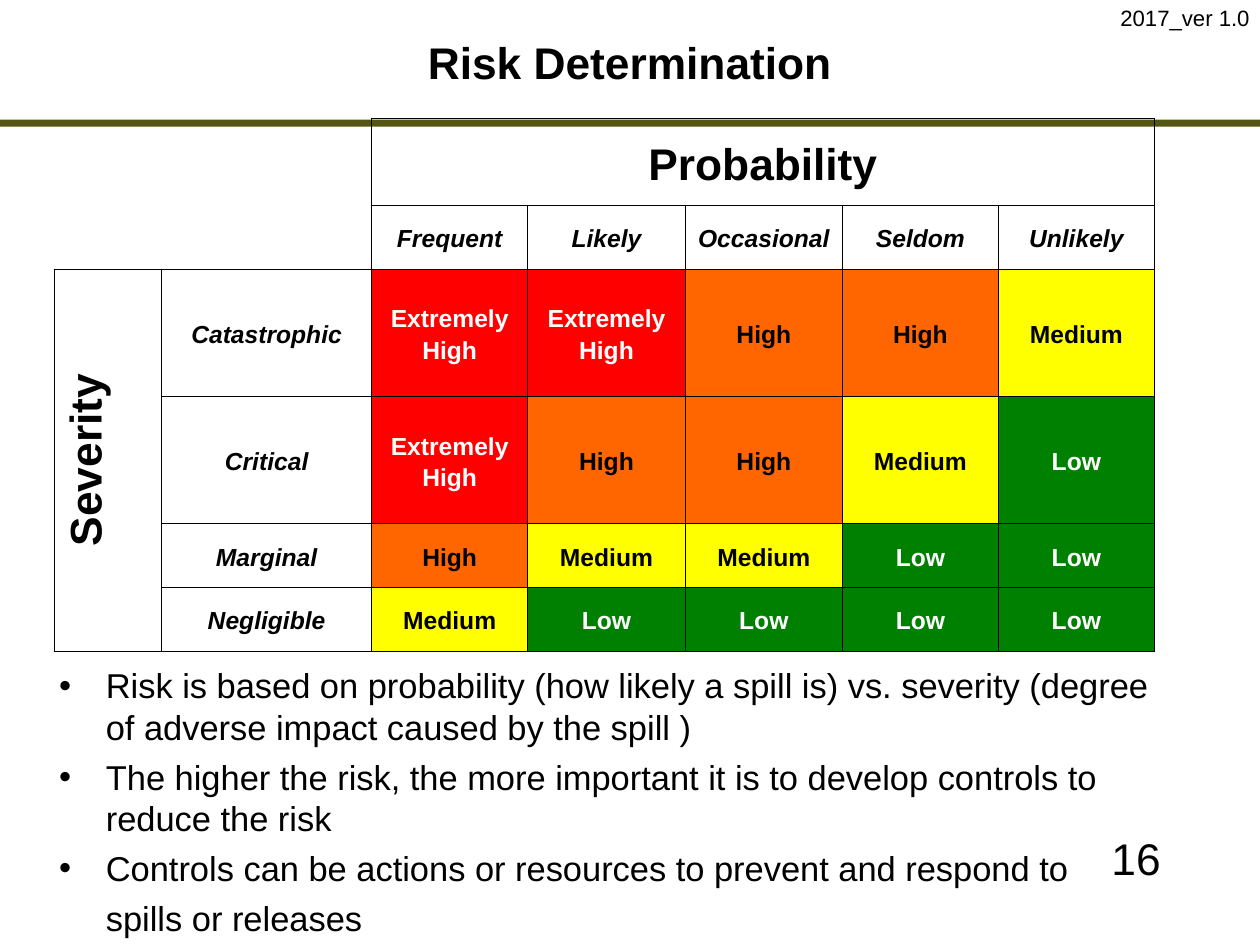
from pptx import Presentation
from pptx.dml.color import RGBColor
from pptx.enum.text import MSO_ANCHOR, MSO_AUTO_SIZE, PP_ALIGN
from pptx.enum.shapes import MSO_SHAPE
from pptx.oxml import parse_xml
from pptx.oxml.ns import nsdecls
from pptx.util import Pt

BLACK = RGBColor(0x00, 0x00, 0x00)
WHITE = RGBColor(0xFF, 0xFF, 0xFF)
OLIVE = RGBColor(0x54, 0x56, 0x12)
RED = RGBColor(0xFF, 0x00, 0x00)
ORANGE = RGBColor(0xFF, 0x66, 0x00)
YELLOW = RGBColor(0xFF, 0xFF, 0x00)
GREEN = RGBColor(0x00, 0x80, 0x00)

FONT = "Arial"
NO_GRID_STYLE = "{2D5ABB26-0587-4C30-8999-92F81FD0307C}"

# Risk level: (fill, text colour)
RISK_COLOURS = {
    "Extremely High": (RED, WHITE),
    "High": (ORANGE, BLACK),
    "Medium": (YELLOW, BLACK),
    "Low": (GREEN, WHITE),
}
PROBABILITIES = ["Frequent", "Likely", "Occasional", "Seldom", "Unlikely"]
RISKS_BY_SEVERITY = {
    "Catastrophic": ["Extremely High", "Extremely High", "High", "High", "Medium"],
    "Critical": ["Extremely High", "High", "High", "Medium", "Low"],
    "Marginal": ["High", "Medium", "Medium", "Low", "Low"],
    "Negligible": ["Medium", "Low", "Low", "Low", "Low"],
}
COLUMN_WIDTHS = [87.5, 170.5, 127, 128, 127.75, 126.75, 126.75]
ROW_HEIGHTS = [71, 51.75, 103.5, 103.5, 51.75, 51.75]
HEADER_ROWS = HEADER_COLUMNS = 2

BULLETS = [
    "Risk is based on probability (how likely a spill is) vs. severity "
    "(degree of adverse impact caused by the spill )",
    "The higher the risk, the more important it is to develop controls to reduce the risk",
    "Controls can be actions or resources to prevent and respond to",
]
CONTINUATION = "spills or releases"


def style_runs(paragraph, size, colour=BLACK, bold=False, italic=False):
    for run in paragraph.runs:
        font = run.font
        font.name, font.size = FONT, Pt(size)
        font.bold, font.italic = bold, italic
        font.color.rgb = colour


def place(shape, left, top, width, height):
    shape.left, shape.top = Pt(left), Pt(top)
    shape.width, shape.height = Pt(width), Pt(height)


def set_placeholder_frame(frame, anchor):
    frame.word_wrap = True
    frame.auto_size = MSO_AUTO_SIZE.NONE
    frame.vertical_anchor = anchor
    frame.margin_left = frame.margin_right = Pt(10)
    frame.margin_top = frame.margin_bottom = Pt(5.75)


def add_label(slide, text, size, left, top, width, height):
    label = slide.shapes.add_textbox(Pt(left), Pt(top), Pt(width), Pt(height))
    frame = label.text_frame
    frame.word_wrap = False
    frame.text = text
    frame.paragraphs[0].alignment = PP_ALIGN.CENTER
    style_runs(frame.paragraphs[0], size)


def add_rule(slide):
    rule = slide.shapes.add_shape(MSO_SHAPE.RECTANGLE, 0, Pt(97.25), Pt(1024), Pt(5.75))
    rule.shadow.inherit = False
    rule.fill.solid()
    rule.fill.fore_color.rgb = OLIVE
    rule.line.fill.background()


def fill_title(title):
    place(title, 51, -13.75, 921.5, 128)
    frame = title.text_frame
    set_placeholder_frame(frame, MSO_ANCHOR.MIDDLE)
    frame.text = "Risk Determination"
    frame.paragraphs[0].alignment = PP_ALIGN.CENTER
    style_runs(frame.paragraphs[0], 36, bold=True)


def fill_bullets(body):
    place(body, 38, 534.25, 921.5, 507)
    frame = body.text_frame
    set_placeholder_frame(frame, MSO_ANCHOR.TOP)
    frame.text = "\n".join([*BULLETS, CONTINUATION])
    for index, paragraph in enumerate(frame.paragraphs):
        properties = paragraph._p.get_or_add_pPr()
        properties.set("marL", str(Pt(38)))
        is_bullet = index < len(BULLETS)
        properties.set("indent", str(Pt(-38) if is_bullet else 0))
        marker = 'buChar %s char="•"' if is_bullet else "buNone %s"
        properties.append(parse_xml(f"<a:{marker % nsdecls('a')}/>"))
        paragraph.space_before = Pt(7 if index else 0)
        paragraph.line_spacing = 1.0
        style_runs(paragraph, 28)


def add_borders(cell, sides):
    """Draw black 1 pt edges on the given sides, listed in the order L, R, T, B."""
    for side in sides:
        cell._tc.get_or_add_tcPr().append(parse_xml(
            f'<a:ln{side} {nsdecls("a")} w="{Pt(1)}"><a:solidFill>'
            f'<a:srgbClr val="{BLACK}"/></a:solidFill></a:ln{side}>'))


def border_sides(row, column):
    """The empty corner only shares edges with its neighbours."""
    if row >= HEADER_ROWS or column >= HEADER_COLUMNS:
        return "LRTB"
    right = "R" if column == 1 else ""
    bottom = "B" if row == 1 or column == 0 else ""
    return right + bottom


def write_cell(cell, text, size=20, colour=BLACK, italic=False):
    cell.text = text
    cell.vertical_anchor = MSO_ANCHOR.MIDDLE
    cell.margin_left = cell.margin_right = Pt(5)
    cell.margin_top = cell.margin_bottom = 0
    paragraph = cell.text_frame.paragraphs[0]
    paragraph.alignment = PP_ALIGN.CENTER
    paragraph.line_spacing = 1.15
    style_runs(paragraph, size, colour, bold=True, italic=italic)


def add_risk_matrix(slide):
    frame = slide.shapes.add_table(
        len(ROW_HEIGHTS), len(COLUMN_WIDTHS), Pt(44), Pt(96),
        Pt(sum(COLUMN_WIDTHS)), Pt(sum(ROW_HEIGHTS)))
    matrix = frame.table
    matrix.first_row = matrix.horz_banding = False
    matrix._tbl.tblPr.find("{*}tableStyleId").text = NO_GRID_STYLE
    for column, width in zip(matrix.columns, COLUMN_WIDTHS):
        column.width = Pt(width)
    for row, height in zip(matrix.rows, ROW_HEIGHTS):
        row.height = Pt(height)
    for row in range(len(ROW_HEIGHTS)):
        for column in range(len(COLUMN_WIDTHS)):
            cell = matrix.cell(row, column)
            add_borders(cell, border_sides(row, column))
            cell.fill.background()

    matrix.cell(0, 0).merge(matrix.cell(1, 0))
    probability = matrix.cell(0, HEADER_COLUMNS)
    probability.merge(matrix.cell(0, len(COLUMN_WIDTHS) - 1))
    write_cell(probability, "Probability", 36)
    severity = matrix.cell(HEADER_ROWS, 0)
    severity.merge(matrix.cell(len(ROW_HEIGHTS) - 1, 0))
    write_cell(severity, "Severity", 36)
    severity._tc.get_or_add_tcPr().set("vert", "vert270")

    for column, name in enumerate(PROBABILITIES, HEADER_COLUMNS):
        write_cell(matrix.cell(1, column), name, italic=True)
    for row, (name, risks) in enumerate(RISKS_BY_SEVERITY.items(), HEADER_ROWS):
        write_cell(matrix.cell(row, 1), name, italic=True)
        for column, risk in enumerate(risks, HEADER_COLUMNS):
            fill, colour = RISK_COLOURS[risk]
            cell = matrix.cell(row, column)
            write_cell(cell, risk, colour=colour)
            cell.fill.solid()
            cell.fill.fore_color.rgb = fill


def main():
    deck = Presentation()
    deck.slide_width, deck.slide_height = Pt(1024), Pt(768)
    slide = deck.slides.add_slide(deck.slide_layouts[1])
    add_label(slide, "16", 36, 893.75, 671.75, 59, 51)
    add_rule(slide)
    fill_title(slide.shapes.title)
    fill_bullets(slide.placeholders[1])
    add_risk_matrix(slide)
    add_label(slide, "2017_ver 1.0", 18, 902.75, 0, 120.5, 29)
    deck.save("out.pptx")


if __name__ == "__main__":
    main()
